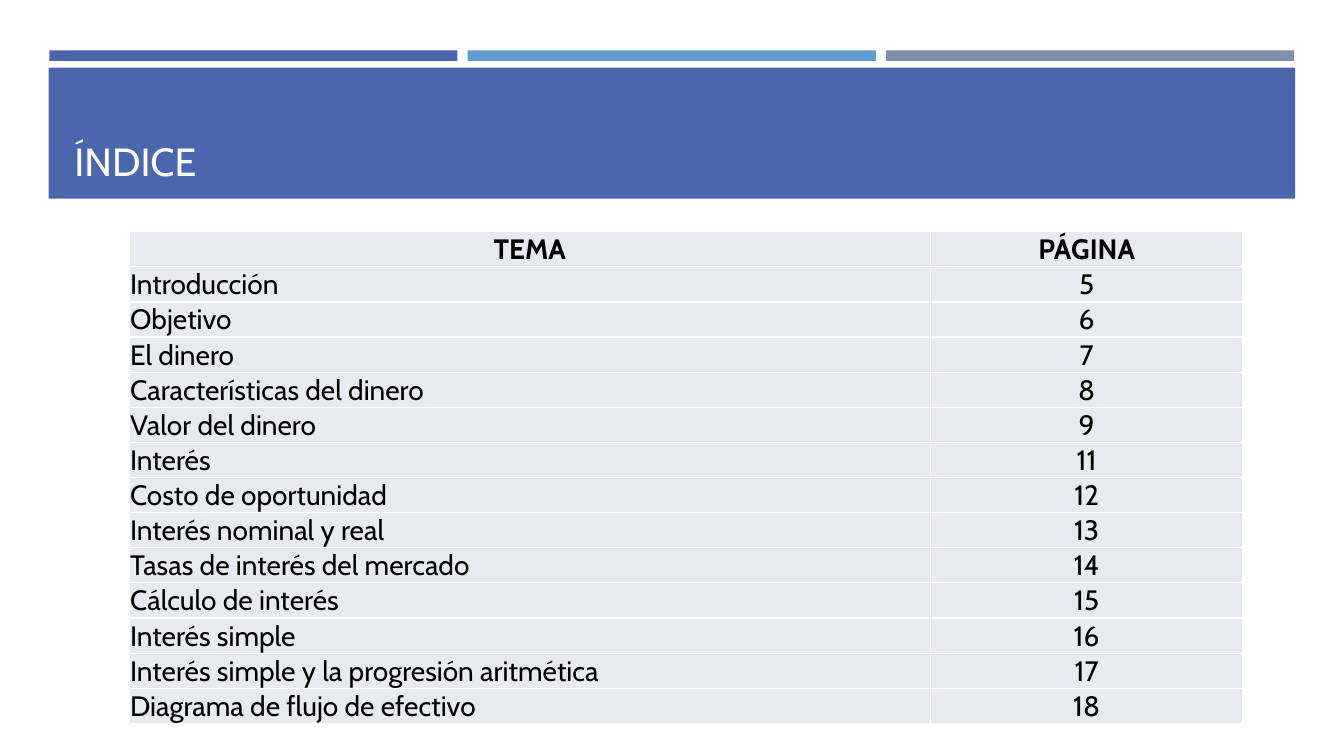
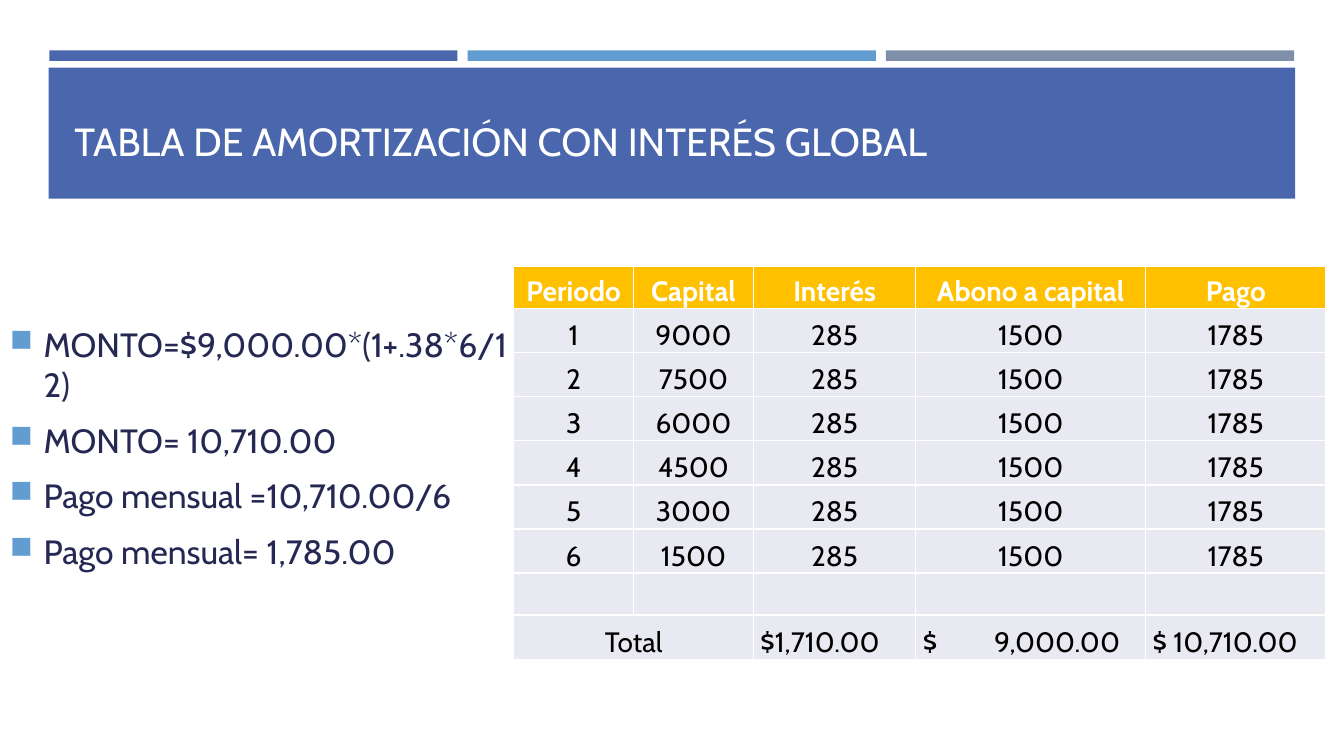
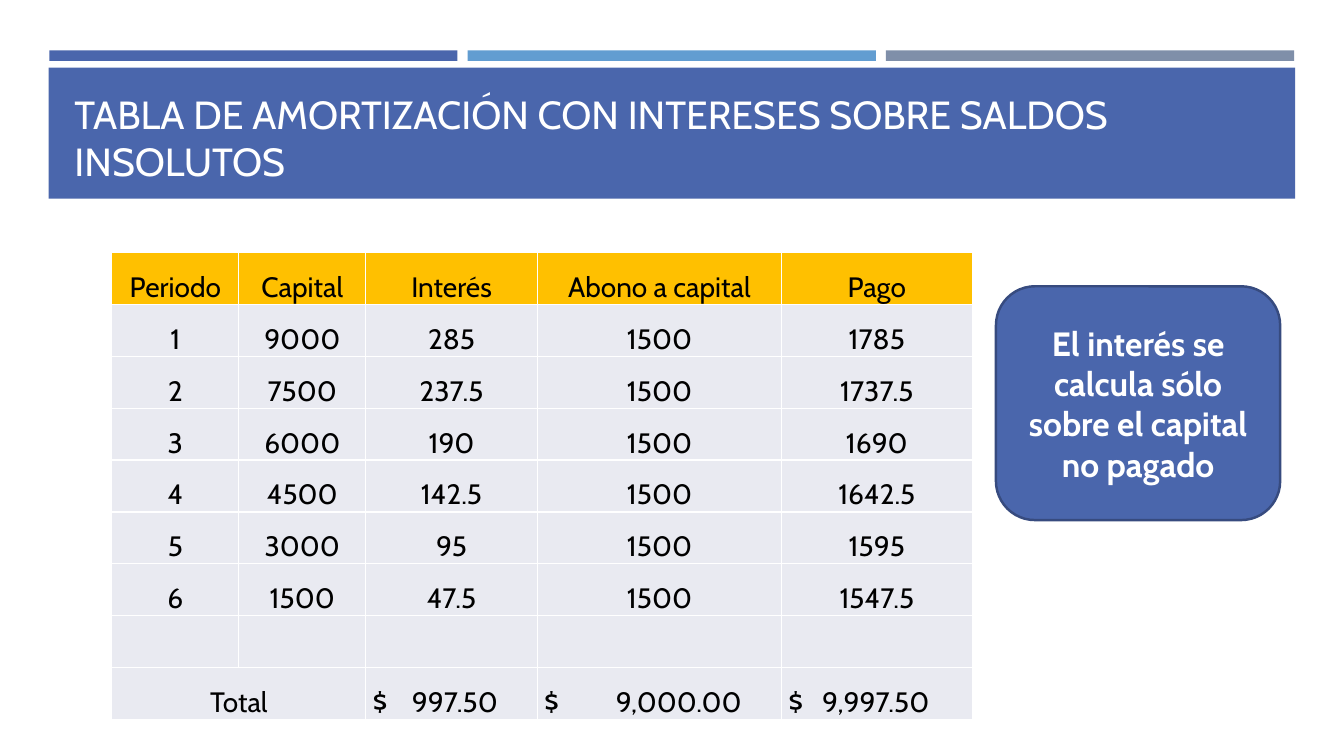
from lxml.etree import SubElement
from pptx import Presentation
from pptx.dml.color import RGBColor
from pptx.enum.shapes import MSO_SHAPE
from pptx.enum.text import MSO_ANCHOR, MSO_AUTO_SIZE, PP_ALIGN
from pptx.oxml import parse_xml
from pptx.oxml.ns import nsdecls, qn
from pptx.util import Pt

FONT = "Cabin"
BLUE, SKY, GRAY, NAVY = "4A66AC", "629DD1", "7F8FA9", "242852"
WHITE, BLACK, AMBER, PALE, EDGE = "FFFFFF", "000000", "FFC000", "E9EAF1", "374B7F"
TITLE_BOX = (46, 55.5, 868.3, 80)


def rgb(hex_color):
    return RGBColor.from_string(hex_color)


def pts(box):
    return [Pt(v) for v in box]


def add_run(p, text, size, color, bold=False):
    r = p.add_run()
    r.text = text
    r.font.name, r.font.size, r.font.bold = FONT, Pt(size), bold
    r.font.color.rgb = rgb(color)


def add_block(s, kind, box, fill, line=None):
    sp = s.shapes.add_shape(kind, *pts(box))
    sp.shadow.inherit = False
    sp.fill.solid()
    sp.fill.fore_color.rgb = rgb(fill)
    if line:
        sp.line.color.rgb = rgb(line)
        sp.line.width = Pt(1.75)
    else:
        sp.line.fill.background()
    return sp


# Shared bars and title band, moved behind the title of the layout
def dress_layout(layout, s):
    bars = [((35.2 + 298.8 * i, 36, 291.6, 7.5), color)
            for i, color in enumerate((BLUE, SKY, GRAY))]
    bars.append(((34.8, 48.4, 890.4, 93.6), BLUE))
    for i, (box, color) in enumerate(bars):
        bar = add_block(s, MSO_SHAPE.RECTANGLE, box, color)
        layout.shapes.element.insert(2 + i, bar.element)


def add_title(s, text, box=TITLE_BOX):
    sp = s.shapes.title
    sp.left, sp.top, sp.width, sp.height = pts(box)
    tf = sp.text_frame
    tf.auto_size, tf.word_wrap = MSO_AUTO_SIZE.NONE, True
    tf.vertical_anchor = MSO_ANCHOR.BOTTOM
    p = tf.paragraphs[0]
    p.alignment = PP_ALIGN.LEFT
    add_run(p, text, 28, WHITE)


# Tables
def style_cell(cell, fill):
    tc_pr = cell._tc.get_or_add_tcPr()
    for i, side in enumerate(("lnL", "lnR", "lnT", "lnB")):
        tc_pr.insert(i, parse_xml(
            f'<a:{side} {nsdecls("a")} w="12700"><a:solidFill>'
            f'<a:srgbClr val="{WHITE}"/></a:solidFill></a:{side}>'))
    cell.fill.solid()
    cell.fill.fore_color.rgb = rgb(fill)


def fill_cell(cell, text, align, color=BLACK, bold=False):
    cell.vertical_anchor = MSO_ANCHOR.BOTTOM
    cell.margin_left = cell.margin_right = cell.margin_top = Pt(0.7)
    cell.margin_bottom = 0
    p = cell.text_frame.paragraphs[0]
    p.alignment = align
    add_run(p, text, 20, color, bold)
    return p


def add_grid(s, left, top, widths, heights, head_fill):
    t = s.shapes.add_table(len(heights), len(widths), Pt(left), Pt(top),
                           Pt(sum(widths)), Pt(sum(heights))).table
    for col, width in zip(t.columns, widths):
        col.width = Pt(width)
    for i, (row, height) in enumerate(zip(t.rows, heights)):
        row.height = Pt(height)
        for cell in row.cells:
            style_cell(cell, PALE if i else head_fill)
    return t


def add_index(s, left, top, entries):
    rows = [("TEMA", "PÁGINA")] + entries
    t = add_grid(s, left, top, (572.4, 223.2), [25.05] * len(rows), PALE)
    for i, (topic, page) in enumerate(rows):
        fill_cell(t.cell(i, 0), topic, PP_ALIGN.LEFT if i else PP_ALIGN.CENTER, bold=not i)
        fill_cell(t.cell(i, 1), page, PP_ALIGN.CENTER, bold=not i)


def add_amortization(s, left, top, widths, heights, interests, totals, head_color, head_bold):
    t = add_grid(s, left, top, widths, heights, AMBER)
    heads = ("Periodo", "Capital", "Interés", "Abono a capital", "Pago")
    for j, head in enumerate(heads):
        fill_cell(t.cell(0, j), head, PP_ALIGN.CENTER, head_color, head_bold)
    for i, interest in enumerate(interests, 1):
        values = (i, 9000 - 1500 * (i - 1), interest, 1500, 1500 + interest)
        for j, value in enumerate(values):
            fill_cell(t.cell(i, j), f"{value:g}", PP_ALIGN.CENTER)
    # Total row: the amount starts at a tab stop where one is given
    last = len(heights) - 1
    t.cell(last, 0).merge(t.cell(last, 1))
    fill_cell(t.cell(last, 0), "Total", PP_ALIGN.CENTER)
    for j, (text, stop) in enumerate(totals, 2):
        cell = t.cell(last, j)
        p = fill_cell(cell, text, PP_ALIGN.LEFT)
        cell.margin_left = Pt(5)
        if stop:
            tabs = SubElement(p._p.get_or_add_pPr(), qn("a:tabLst"))
            SubElement(tabs, qn("a:tab"), pos=str(Pt(stop)), algn="l")


# Text parts
def add_bullets(s, box, lines):
    tf = s.shapes.add_textbox(*pts(box)).text_frame
    tf.word_wrap, tf.vertical_anchor = True, MSO_ANCHOR.MIDDLE
    for i, line in enumerate(lines):
        p = tf.add_paragraph() if i else tf.paragraphs[0]
        p.alignment = PP_ALIGN.JUSTIFY
        p.space_before, p.space_after = Pt(4.8), Pt(6)
        p_pr = p._p.get_or_add_pPr()
        p_pr.set("marL", str(Pt(24)))
        p_pr.set("indent", str(Pt(-24)))
        SubElement(SubElement(p_pr, qn("a:buClr")), qn("a:srgbClr"), val=SKY)
        SubElement(p_pr, qn("a:buSzPct"), val="92000")
        SubElement(p_pr, qn("a:buChar"), char="■")
        add_run(p, line, 24, NAVY)


def add_callout(s, box, text):
    sp = add_block(s, MSO_SHAPE.ROUNDED_RECTANGLE, box, BLUE, EDGE)
    tf = sp.text_frame
    tf.word_wrap, tf.vertical_anchor = True, MSO_ANCHOR.MIDDLE
    p = tf.paragraphs[0]
    p.alignment = PP_ALIGN.CENTER
    add_run(p, text, 24, WHITE, True)


def main():
    prs = Presentation()
    prs.slide_width, prs.slide_height = Pt(960), Pt(540)
    layout = prs.slide_layouts[5]

    # Index
    s = prs.slides.add_slide(layout)
    dress_layout(layout, s)
    add_title(s, "ÍNDICE")
    add_index(s, 92.2, 165.5, [
        ("Introducción", "5"), ("Objetivo", "6"), ("El dinero", "7"),
        ("Características del dinero", "8"), ("Valor del dinero", "9"),
        ("Interés", "11"), ("Costo de oportunidad", "12"),
        ("Interés nominal y real", "13"), ("Tasas de interés del mercado", "14"),
        ("Cálculo de interés", "15"), ("Interés simple", "16"),
        ("Interés simple y la progresión aritmética", "17"),
        ("Diagrama de flujo de efectivo", "18")])

    # Global interest
    s = prs.slides.add_slide(layout)
    add_title(s, "TABLA DE AMORTIZACIÓN CON INTERÉS GLOBAL", (*TITLE_BOX[:3], 65.5))
    add_bullets(s, (0, 190, 375, 259), [
        "MONTO=$9,000.00*(1+.38*6/12)", "MONTO= 10,710.00",
        "Pago mensual =10,710.00/6", "Pago mensual= 1,785.00"])
    add_amortization(
        s, 367, 190.4, (85.6, 85.6, 116, 164.2, 128.8), [30] + [31.5] * 6 + [30, 31.5],
        [285] * 6, (("$1,710.00", 0), ("$\t9,000.00", 51), ("$ 10,710.00", 0)), WHITE, True)

    # Interest on the unpaid balance
    s = prs.slides.add_slide(layout)
    add_title(s, "TABLA DE AMORTIZACIÓN CON INTERESES SOBRE SALDOS INSOLUTOS")
    add_amortization(
        s, 79.9, 180.3, (90.7, 90.7, 122.6, 174.4, 136.2), [37.1] * 9,
        [(9000 - 1500 * k) * 0.38 / 12 for k in range(6)],
        (("$\t997.50", 28), ("$\t9,000.00", 51), ("$\t9,997.50", 24)), BLACK, False)
    add_callout(s, (711.4, 204.5, 203, 167),
                "El interés se calcula sólo sobre el capital no pagado")

    prs.save("out.pptx")


if __name__ == "__main__":
    main()
